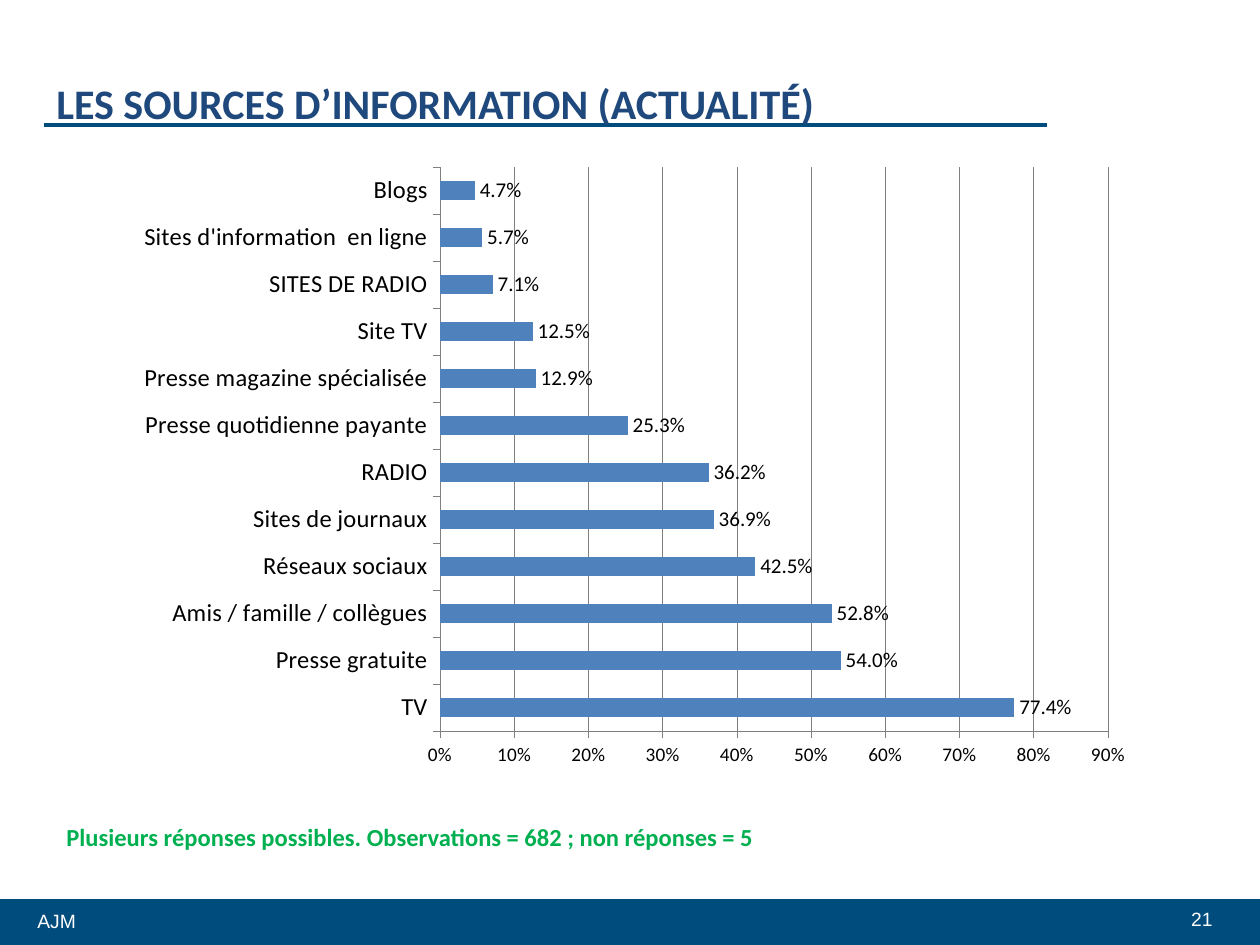
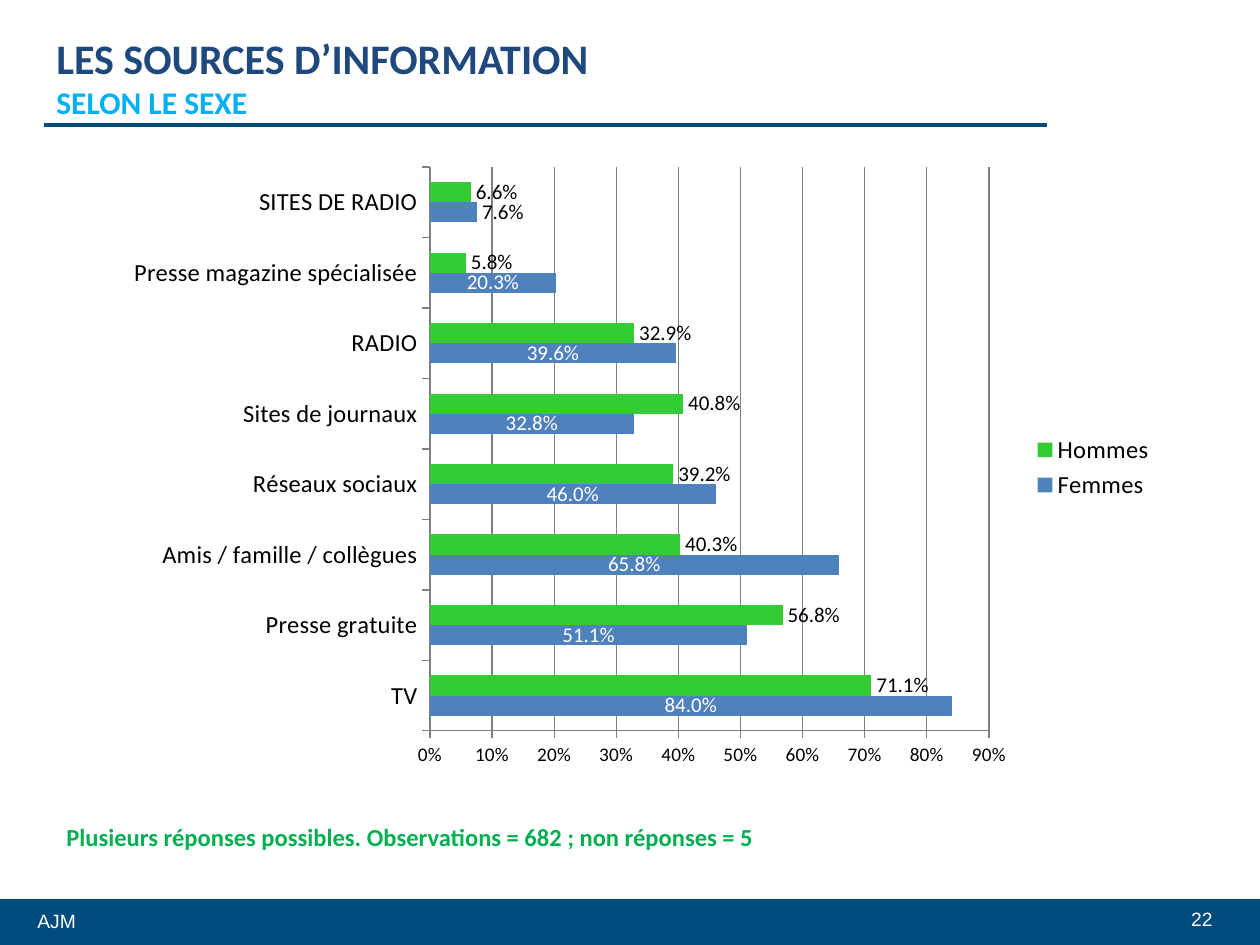
import pptx
import pptx.chart.data
import pptx.dml.color
import pptx.enum.chart
import pptx.enum.shapes
import pptx.enum.text
import pptx.oxml
import pptx.util
from pptx.oxml.ns import nsdecls, qn

EMU_PER_PX = 914400 / 126
SLIDE_WIDTH, SLIDE_HEIGHT = 1260, 945
PLOT_TOP, PLOT_HEIGHT = 167, 564
COLORS = {
    "band": "004C7D",
    "title": "1F497D",
    "subtitle": "00B0F0",
    "note": "00B050",
    "women": "4F81BD",
    "men": "33CC33",
    "axis": "808080",
    "black": "000000",
    "white": "FFFFFF",
}
NOTE = "Plusieurs réponses possibles. Observations = 682 ; non réponses = 5"

SOURCES = {
    "TV": 0.774,
    "Presse gratuite": 0.54,
    "Amis / famille / collègues": 0.528,
    "Réseaux sociaux": 0.425,
    "Sites de journaux": 0.369,
    "RADIO": 0.362,
    "Presse quotidienne payante": 0.253,
    "Presse magazine spécialisée": 0.129,
    "Site TV": 0.125,
    "SITES DE RADIO": 0.071,
    "Sites d'information  en ligne": 0.057,
    "Blogs": 0.047,
}
# Each source: (Femmes, Hommes)
SOURCES_BY_SEX = {
    "TV": (0.84, 0.711),
    "Presse gratuite": (0.511, 0.568),
    "Amis / famille / collègues": (0.658, 0.403),
    "Réseaux sociaux": (0.46, 0.392),
    "Sites de journaux": (0.328, 0.408),
    "RADIO": (0.396, 0.329),
    "Presse magazine spécialisée": (0.203, 0.058),
    "SITES DE RADIO": (0.076, 0.066),
}


def px(length):
    return pptx.util.Emu(round(length * EMU_PER_PX))


def rgb(name):
    return pptx.dml.color.RGBColor.from_string(COLORS[name])


def style_font(font, size, color="black", name="Calibri", bold=False):
    font.size = pptx.util.Pt(size)
    font.name = name
    font.bold = bold
    font.color.rgb = rgb(color)


def add_text(slide, box, text, size, color, name="Calibri", bold=False, wrap=True):
    """Add a one-paragraph text box and return its text frame."""
    frame = slide.shapes.add_textbox(*map(px, box)).text_frame
    frame.word_wrap = wrap
    paragraph = frame.paragraphs[0]
    paragraph.text = text
    style_font(paragraph.font, size, color, name, bold)
    return frame


def add_footer(slide, number):
    band = slide.shapes.add_shape(
        pptx.enum.shapes.MSO_SHAPE.RECTANGLE, 0, px(899), px(SLIDE_WIDTH), px(46))
    band.shadow.inherit = False
    band.fill.solid()
    band.fill.fore_color.rgb = rgb("band")
    band.line.fill.background()
    add_text(slide, (25, 903, 397, 36), "AJM", 11, "white", "Arial")
    page = add_text(slide, (828, 901, 397, 36), str(number), 11, "white", "Arial")
    page.paragraphs[0].alignment = pptx.enum.text.PP_ALIGN.RIGHT


def add_title_rule(slide):
    rule = slide.shapes.add_connector(
        pptx.enum.shapes.MSO_CONNECTOR.STRAIGHT, px(44), px(125), px(1047), px(125))
    rule.line.color.rgb = rgb("band")
    rule.line.width = pptx.util.Pt(2)
    rule._element.spPr.append(pptx.oxml.parse_xml(f"<a:effectLst {nsdecls('a')}/>"))


def add_title(slide, top, title, subtitle=None):
    frame = add_text(slide, (44, top, 1022, 44), title, 24, "title", bold=True)
    frame.vertical_anchor = pptx.enum.text.MSO_ANCHOR.MIDDLE
    if subtitle:
        paragraph = frame.paragraphs[0]
        paragraph.add_line_break()
        run = paragraph.add_run()
        run.text = subtitle
        style_font(run.font, 18, "subtitle", bold=True)


def add_survey_slide(deck, number, title_top, title, subtitle=None):
    slide = deck.slides.add_slide(deck.slide_layouts[6])
    add_footer(slide, number)
    add_title_rule(slide)
    add_title(slide, title_top, title, subtitle)
    add_text(slide, (54, 816, 719, 43), NOTE, 14, "note", bold=True, wrap=False)
    return slide


def style_line(line, width):
    line.color.rgb = rgb("axis")
    line.width = pptx.util.Pt(width)


def style_axes(chart, line_width):
    categories, shares = chart.category_axis, chart.value_axis
    for axis, size in ((categories, 14), (shares, 11)):
        axis.major_tick_mark = pptx.enum.chart.XL_TICK_MARK.OUTSIDE
        axis.minor_tick_mark = pptx.enum.chart.XL_TICK_MARK.NONE
        style_font(axis.tick_labels.font, size)
        style_line(axis.format.line, line_width)
    categories.has_major_gridlines = False
    shares.has_major_gridlines = True
    style_line(shares.major_gridlines.format.line, line_width)
    shares.minimum_scale, shares.maximum_scale, shares.major_unit = 0, 0.9, 0.1
    shares.tick_labels.number_format = "0%"
    shares.tick_labels.number_format_is_linked = False


def place_plot(chart, frame_box, plot_left, plot_width):
    """Fix the inner plot area, given in slide px, inside the chart frame."""
    left, top, width, height = frame_box
    fractions = {
        "x": (plot_left - left) / width,
        "y": (PLOT_TOP - top) / height,
        "w": plot_width / width,
        "h": PLOT_HEIGHT / height,
    }
    sizes = "".join(f'<c:{key} val="{value:.4f}"/>' for key, value in fractions.items())
    plot_area = chart._chartSpace.chart.plotArea
    for layout in plot_area.findall(qn("c:layout")):
        plot_area.remove(layout)
    plot_area.insert(0, pptx.oxml.parse_xml(
        f'<c:layout {nsdecls("c")}><c:manualLayout><c:layoutTarget val="inner"/>'
        f'<c:xMode val="edge"/><c:yMode val="edge"/>{sizes}</c:manualLayout></c:layout>'))


def style_series(series, bar_color, label_color, label_position):
    series.format.fill.solid()
    series.format.fill.fore_color.rgb = rgb(bar_color)
    labels = series.data_labels
    labels.show_value = True
    labels.number_format = "0.0%"
    labels.number_format_is_linked = False
    labels.position = label_position
    style_font(labels.font, 12, label_color)


def add_bar_chart(slide, box, plot_left, plot_width, categories, series, line_width):
    """Add a bar chart; series is a list of (name, values)."""
    data = pptx.chart.data.CategoryChartData(number_format="0.0%")
    data.categories = categories
    for name, values in series:
        data.add_series(name, values)
    chart = slide.shapes.add_chart(
        pptx.enum.chart.XL_CHART_TYPE.BAR_CLUSTERED, *map(px, box), data).chart
    style_font(chart.font, 10)
    chart.has_title = False
    chart.has_legend = len(series) > 1
    plot = chart.plots[0]
    plot.vary_by_categories = False
    plot.gap_width = 150
    plot.overlap = 0
    style_axes(chart, line_width)
    place_plot(chart, box, plot_left, plot_width)
    return chart


def main():
    deck = pptx.Presentation()
    deck.slide_width, deck.slide_height = px(SLIDE_WIDTH), px(SLIDE_HEIGHT)
    position = pptx.enum.chart.XL_LABEL_POSITION

    overall = add_survey_slide(deck, 21, 81, "LES SOURCES D’INFORMATION (ACTUALITÉ)")
    chart = add_bar_chart(overall, (123, 155, 1022, 625), 440, 668,
                          SOURCES.keys(), [("Series 1", SOURCES.values())], 0.25)
    style_series(chart.series[0], "women", "black", position.OUTSIDE_END)

    by_sex = add_survey_slide(deck, 22, 55, "LES SOURCES D’INFORMATION", "SELON LE SEXE")
    women, men = zip(*SOURCES_BY_SEX.values())
    chart = add_bar_chart(by_sex, (115, 155, 1052, 625), 430, 559,
                          SOURCES_BY_SEX.keys(), [("Femmes", women), ("Hommes", men)], 0.75)
    women_bars, men_bars = chart.plots[0].series
    style_series(women_bars, "women", "white", position.CENTER)
    style_series(men_bars, "men", "black", position.OUTSIDE_END)
    short_bar_label = women_bars.points[len(women) - 1].data_label
    style_font(short_bar_label.font, 12)
    short_bar_label.position = position.OUTSIDE_END
    chart.legend.position = pptx.enum.chart.XL_LEGEND_POSITION.RIGHT
    chart.legend.include_in_layout = False
    style_font(chart.legend.font, 14)

    deck.save("out.pptx")


if __name__ == "__main__":
    main()
